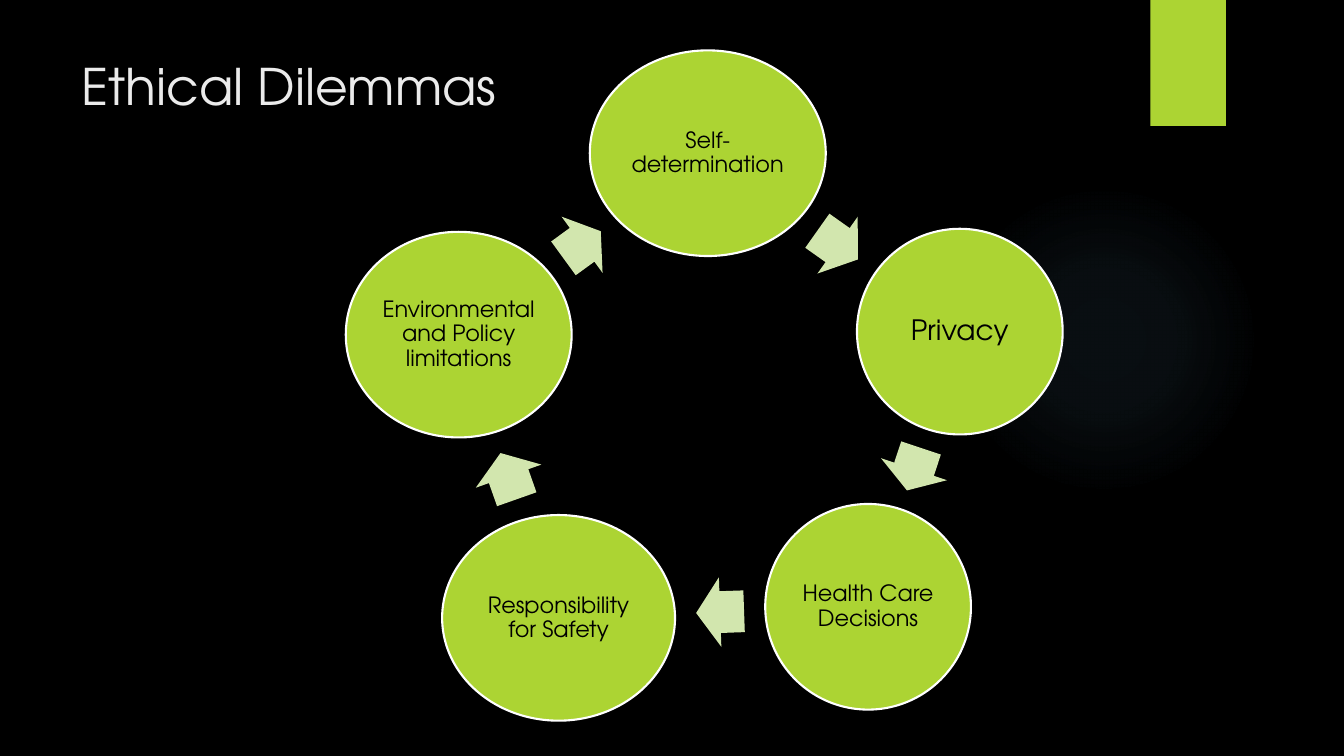
import math
from lxml import etree
from pptx import Presentation
from pptx import util as u
from pptx.dml.color import RGBColor
from pptx.enum import shapes, text
from pptx.oxml import parse_xml
from pptx.oxml.ns import nsdecls

COLORS = {
    "night": "000000",
    "lime": "ACD433",
    "pale": "D2E6AE",
    "glow": "7AC4F0",
    "outline": "FFFFFF",
    "heading": "EBEBEB",
    "label": "000000",
}
FONT = "TeX Gyre Adventor"
DIAMETER = 2.04
ARROW_HEIGHT = 0.69
ARROW_SHARE = 0.53


def write(frame, words, size, color, align, anchor, inset=None, spacing=None):
    frame.word_wrap = True
    frame.auto_size = text.MSO_AUTO_SIZE.NONE
    frame.vertical_anchor = anchor
    if inset is not None:
        frame.margin_left = frame.margin_right = u.Inches(inset)
        frame.margin_top = frame.margin_bottom = u.Inches(inset)
    frame.text = words
    line = frame.paragraphs[0]
    line.alignment = align
    line.line_spacing = spacing
    font = line.runs[0].font
    font.name = FONT
    font.size = u.Pt(size)
    font.color.rgb = RGBColor.from_string(COLORS[color])


def draw(kind, left, top, width, height, color):
    form = slide.shapes.add_shape(kind, *map(u.Inches, (left, top, width, height)))
    form.shadow.inherit = False
    form.fill.solid()
    form.fill.fore_color.rgb = RGBColor.from_string(COLORS[color])
    form.line.fill.background()
    return form


deck = Presentation()
deck.slide_width, deck.slide_height = u.Inches(13.33), u.Inches(7.5)
slide = deck.slides.add_slide(deck.slide_layouts[5])
slide.background.fill.solid()
slide.background.fill.fore_color.rgb = RGBColor.from_string(COLORS["night"])

heading = slide.shapes.title
heading.left, heading.top = u.Inches(0.71), u.Inches(0.5)
heading.width, heading.height = u.Inches(10.29), u.Inches(1.53)
write(heading.text_frame, "Ethical Dilemmas", 36, "heading",
      text.PP_ALIGN.LEFT, text.MSO_ANCHOR.TOP)

glow = draw(shapes.MSO_SHAPE.OVAL, 9.41, 1.83, 3.08, 3.08, "glow")
stops = "".join(
    f'<a:gs pos="{place * 1000}"><a:srgbClr val="{COLORS["glow"]}">'
    f'<a:alpha val="{opacity * 1000}"/></a:srgbClr></a:gs>'
    for place, opacity in ((0, 7), (36, 6), (69, 0), (100, 0))
)
fade = parse_xml(
    f'<a:gradFill {nsdecls("a")} rotWithShape="1"><a:gsLst>{stops}</a:gsLst>'
    '<a:path path="circle"><a:fillToRect l="50000" t="50000" r="50000" b="50000"/>'
    '</a:path></a:gradFill>'
)
plain = glow._element.spPr.find("{*}solidFill")
plain.getparent().replace(plain, fade)

ribbon = draw(shapes.MSO_SHAPE.RECTANGLE, 11.41, 0, 0.75, 1.25, "lime")

dilemmas = [
    ("Self-determination", 7.02, 1.52, 2.34, 16),
    ("Privacy", 9.52, 3.29, 2.04, 20),
    ("Health Care Decisions", 8.61, 6.02, 2.04, 16),
    ("Responsibility for Safety", 5.54, 6.13, 2.31, 16),
    ("Environmental and Policy limitations", 4.55, 3.32, 2.24, 16),
]
for index, (dilemma, x, y, width, size) in enumerate(dilemmas):
    circle = draw(shapes.MSO_SHAPE.OVAL, x - width / 2, y - DIAMETER / 2,
                  width, DIAMETER, "lime")
    circle.line.color.rgb = RGBColor.from_string(COLORS["outline"])
    circle.line.width = u.Pt(1.5)
    write(circle.text_frame, dilemma, size, "label", text.PP_ALIGN.CENTER,
          text.MSO_ANCHOR.MIDDLE, inset=0.02, spacing=0.9)

    _, next_x, next_y, next_width, _ = dilemmas[(index + 1) % len(dilemmas)]
    angle = math.atan2(next_y - y, next_x - x)
    across, down = math.cos(angle), math.sin(angle)
    leave, reach = (
        1 / math.hypot(across / (w / 2), down / (DIAMETER / 2))
        for w in (width, next_width)
    )
    distance = math.hypot(next_x - x, next_y - y)
    length = ARROW_SHARE * (distance - leave - reach)
    middle = (distance + leave - reach) / 2
    arrow = draw(shapes.MSO_SHAPE.RIGHT_ARROW,
                 x + middle * across - length / 2,
                 y + middle * down - ARROW_HEIGHT / 2,
                 length, ARROW_HEIGHT, "pale")
    arrow.adjustments[0], arrow.adjustments[1] = 0.6, 0.5
    arrow.rotation = math.degrees(angle) % 360

deck.save("out.pptx")
